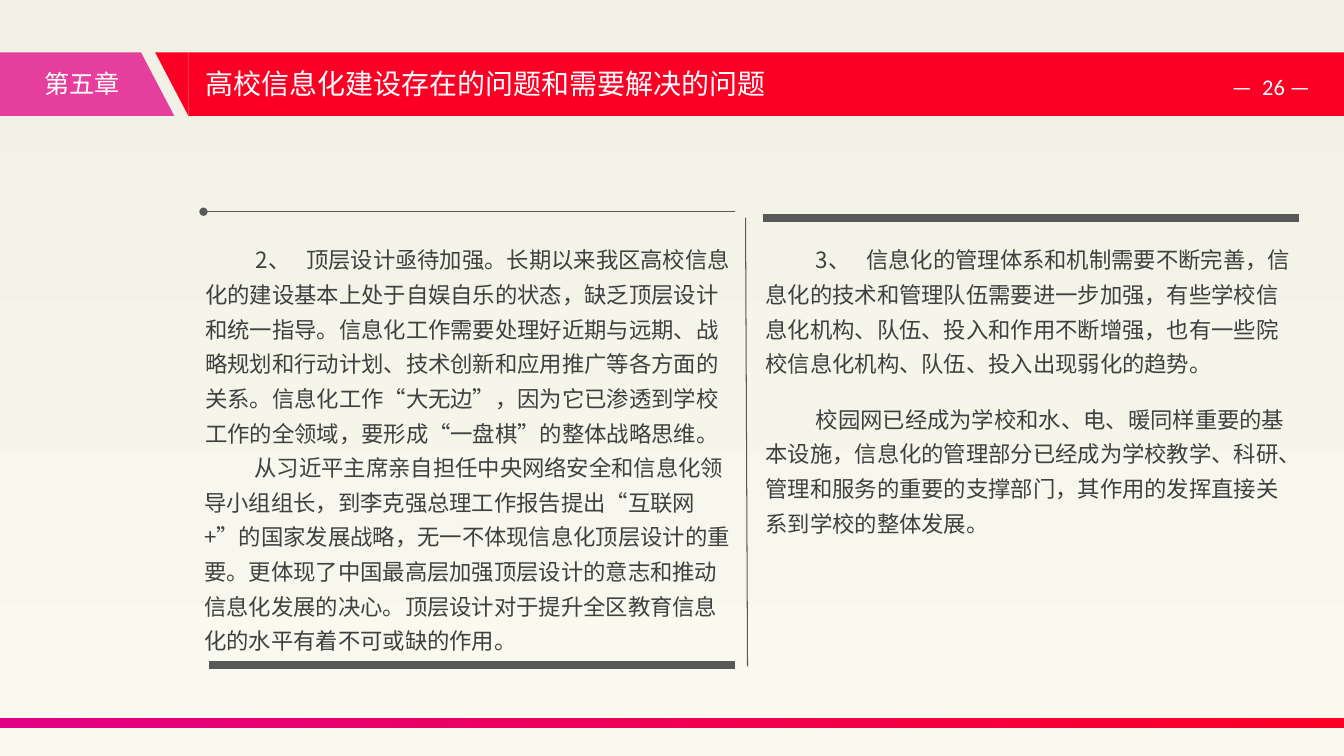
from lxml.etree import SubElement
from pptx import Presentation
from pptx.dml.color import RGBColor
from pptx.enum.shapes import MSO_CONNECTOR, MSO_SHAPE
from pptx.enum.text import MSO_AUTO_SIZE, PP_ALIGN
from pptx.oxml.ns import qn
from pptx.util import Inches, Pt

CJK_FONT = "Noto Sans CJK SC"
PINK, RED, WHITE = "E20084", "FB0024", "FFFFFF"
BODY_COLOR, RULE_COLOR = "404040", "595959"
SLIDE_WIDTH, SLIDE_HEIGHT = 13.34, 7.5
BAND_TOP, BAND_HEIGHT, SLANT_WIDTH = 0.52, 0.63, 0.33
COLUMN_WIDTH = 5.46

# left, top, height, text
BODY_TEXTS = [
    (1.94, 2.32, 2.19,
     "2、\t顶层设计亟待加强。长期以来我区高校信息化的建设基本上处于自娱自乐的状态，"
     "缺乏顶层设计和统一指导。信息化工作需要处理好近期与远期、战略规划和行动计划、"
     "技术创新和应用推广等各方面的关系。信息化工作“大无边”，因为它已渗透到学校工作的全领域，"
     "要形成“一盘棋”的整体战略思维。"),
    (1.93, 4.38, 2.15,
     "从习近平主席亲自担任中央网络安全和信息化领导小组组长，到李克强总理工作报告提出"
     "“互联网+”的国家发展战略，无一不体现信息化顶层设计的重要。更体现了中国最高层加强"
     "顶层设计的意志和推动信息化发展的决心。顶层设计对于提升全区教育信息化的水平有着"
     "不可或缺的作用。"),
    (7.5, 2.32, 1.46,
     "3、\t信息化的管理体系和机制需要不断完善，信息化的技术和管理队伍需要进一步加强，"
     "有些学校信息化机构、队伍、投入和作用不断增强，也有一些院校信息化机构、队伍、"
     "投入出现弱化的趋势。"),
    (7.5, 3.9, 1.46,
     "校园网已经成为学校和水、电、暖同样重要的基本设施，信息化的管理部分已经成为学校教学、"
     "科研、管理和服务的重要的支撑部门，其作用的发挥直接关系到学校的整体发展。"),
]


def color(value):
    return RGBColor.from_string(value)


def add_block(page, left, top, width, height, preset=MSO_SHAPE.RECTANGLE):
    block = page.shapes.add_shape(
        preset, Inches(left), Inches(top), Inches(width), Inches(height))
    block.shadow.inherit = False
    block.line.fill.background()
    return block


def fill_solid(block, value, opacity=100):
    block.fill.solid()
    block.fill.fore_color.rgb = color(value)
    if opacity < 100:
        tint = block.fill._xPr.find(".//" + qn("a:srgbClr"))
        SubElement(tint, qn("a:alpha"), val=str(opacity * 1000))


def fill_gradient(block, first, last, angle):
    """Blend two colours; the angle runs counter-clockwise from left to right."""
    block.fill.gradient()
    block.fill.gradient_angle = angle
    for stop, value, position in zip(block.fill.gradient_stops, (first, last), (0, 1)):
        stop.color.rgb = color(value)
        stop.position = position


def add_text(page, left, top, width, height, text, size, value, font=CJK_FONT, wrap=True):
    box = page.shapes.add_textbox(
        Inches(left), Inches(top), Inches(width), Inches(height))
    frame = box.text_frame
    frame.word_wrap = wrap
    frame.auto_size = MSO_AUTO_SIZE.SHAPE_TO_FIT_TEXT
    frame.text = text
    para = frame.paragraphs[0]
    for span in para.runs:
        span.font.size = Pt(size)
        span.font.color.rgb = color(value)
        span.font.name = font
        SubElement(span.font._element, qn("a:ea"), typeface=font)
    return para


def add_body(page, left, top, height, text):
    para = add_text(page, left, top, COLUMN_WIDTH, height, text, 16, BODY_COLOR)
    para.line_spacing = 1.29
    para.space_after = Pt(6)
    properties = para._p.get_or_add_pPr()
    properties.set("marL", "0")
    properties.set("indent", str(Inches(0.5)))


def add_rule(page, start, end, weight, dot=False):
    rule = page.shapes.add_connector(
        MSO_CONNECTOR.STRAIGHT, *(Inches(length) for length in start + end))
    rule.line.color.rgb = color(RULE_COLOR)
    rule.line.width = Pt(weight)
    if dot:
        SubElement(rule.line._get_or_add_ln(), qn("a:headEnd"), type="oval")
    SubElement(rule._element.spPr, qn("a:effectLst"))


def add_backdrop(page):
    backdrop = add_block(page, 0, 0, SLIDE_WIDTH, SLIDE_HEIGHT)
    fill_gradient(backdrop, "F1F1E5", "F9F9EF", 270)
    footer = add_block(page, 0, 7.12, SLIDE_WIDTH, 0.1)
    fill_gradient(footer, PINK, RED, 0)


def add_header(page):
    title_left = 1.87
    chapter = add_block(page, 0, BAND_TOP, 1.4, BAND_HEIGHT)
    fill_solid(chapter, PINK, 74)
    title = add_block(page, title_left, BAND_TOP, SLIDE_WIDTH - title_left, BAND_HEIGHT)
    fill_solid(title, RED)
    chapter_slant = add_block(
        page, 1.4, BAND_TOP, SLANT_WIDTH, BAND_HEIGHT, MSO_SHAPE.RIGHT_TRIANGLE)
    fill_solid(chapter_slant, PINK, 74)
    title_slant = add_block(
        page, title_left - SLANT_WIDTH, BAND_TOP, SLANT_WIDTH, BAND_HEIGHT,
        MSO_SHAPE.RIGHT_TRIANGLE)
    title_slant.rotation = 180
    fill_solid(title_slant, RED)

    add_text(page, 12.13, 0.68, 1.07, 0.37, "—  26 —", 16, WHITE, "Calibri", wrap=False)
    label = add_text(page, 0, 0.63, 1.63, 0.4, "第五章", 18, WHITE)
    label.alignment = PP_ALIGN.CENTER
    add_text(page, 1.94, 0.61, 6.14, 0.44,
             "高校信息化建设存在的问题和需要解决的问题", 20, WHITE)


def main():
    deck = Presentation()
    deck.slide_width = Inches(SLIDE_WIDTH)
    deck.slide_height = Inches(SLIDE_HEIGHT)
    page = deck.slides.add_slide(deck.slide_layouts[6])

    add_backdrop(page)
    add_header(page)
    for body in BODY_TEXTS:
        add_body(page, *body)

    add_rule(page, (2.02, 2.1), (7.3, 2.1), 0.75, dot=True)
    add_rule(page, (7.42, 6.61), (7.4, 2.16), 0.75)
    add_rule(page, (7.57, 2.16), (12.89, 2.16), 6)
    add_rule(page, (2.07, 6.6), (7.3, 6.6), 6)
    deck.save("out.pptx")


if __name__ == "__main__":
    main()
